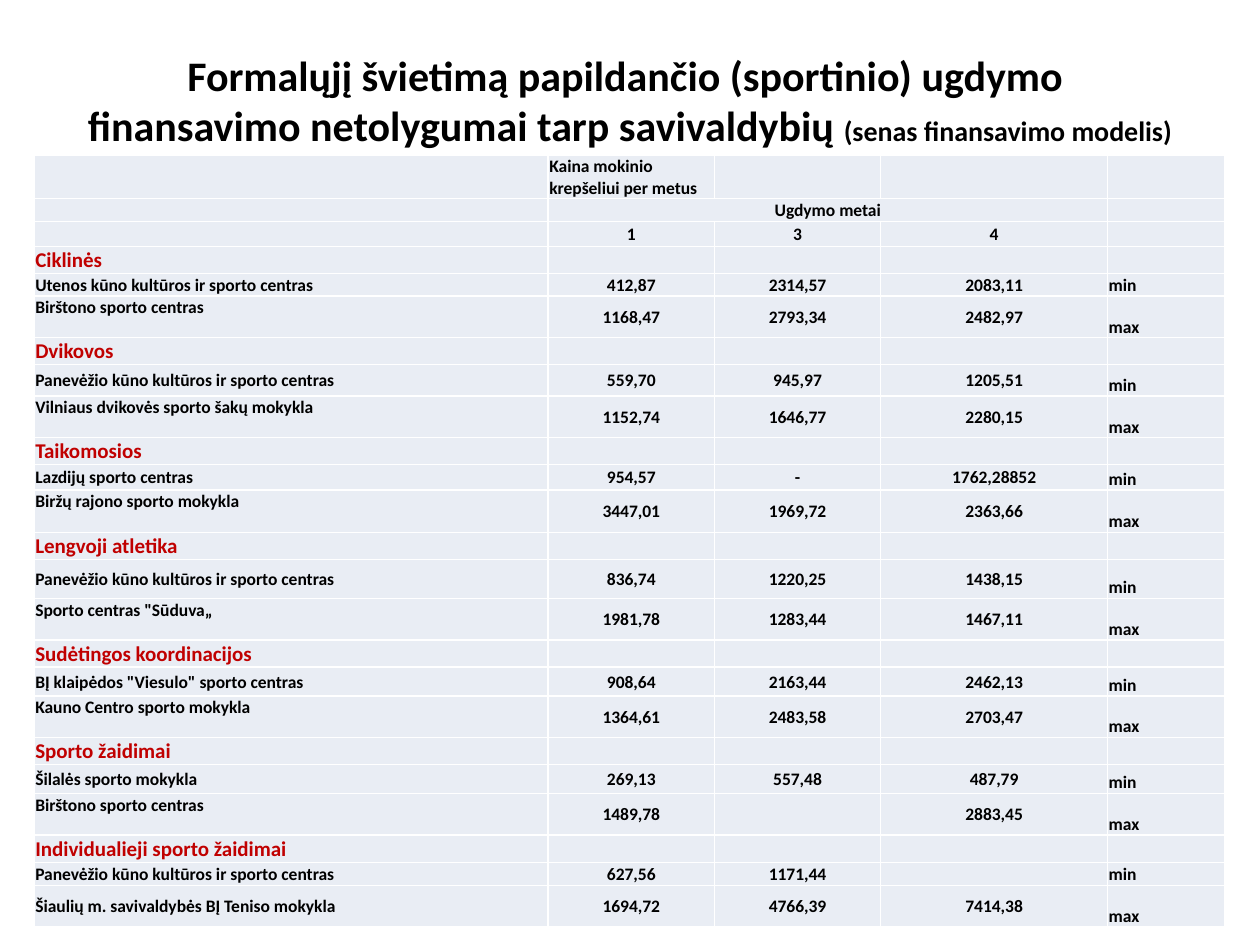
from lxml.etree import SubElement
from pptx import Presentation
from pptx.dml.color import RGBColor
from pptx.enum.text import MSO_ANCHOR, PP_ALIGN
from pptx.oxml.ns import qn
from pptx.util import Inches, Pt

BLACK, RED, WHITE, PALE = "000000", "C00000", "FFFFFF", "E9EDF4"
COLUMN_WIDTHS = [4.08, 1.32, 1.32, 1.8, 0.93]
ROW_HEIGHTS = [0.33, 0.18, 0.2, 0.21, 0.18, 0.33, 0.21, 0.25, 0.33, 0.21, 0.2, 0.34,
               0.21, 0.31, 0.33, 0.2, 0.23, 0.33, 0.21, 0.23, 0.33, 0.22, 0.18, 0.33]
HEADER = [
    ["", "Kaina mokinio krepšeliui per metus", "", "", ""],
    ["", "Ugdymo metai", "", "", ""],
    ["", "1", "3", "4", ""],
]
SPORTS = {
    "Ciklinės": [
        ["Utenos kūno kultūros ir sporto centras", "412,87", "2314,57", "2083,11"],
        ["Birštono sporto centras", "1168,47", "2793,34", "2482,97"],
    ],
    "Dvikovos": [
        ["Panevėžio kūno kultūros ir sporto centras", "559,70", "945,97", "1205,51"],
        ["Vilniaus dvikovės sporto šakų mokykla", "1152,74", "1646,77", "2280,15"],
    ],
    "Taikomosios": [
        ["Lazdijų sporto centras", "954,57", "-", "1762,28852"],
        ["Biržų rajono sporto mokykla", "3447,01", "1969,72", "2363,66"],
    ],
    "Lengvoji atletika": [
        ["Panevėžio kūno kultūros ir sporto centras", "836,74", "1220,25", "1438,15"],
        ['Sporto centras "Sūduva„', "1981,78", "1283,44", "1467,11"],
    ],
    "Sudėtingos koordinacijos": [
        ['BĮ klaipėdos "Viesulo" sporto centras', "908,64", "2163,44", "2462,13"],
        ["Kauno Centro sporto mokykla", "1364,61", "2483,58", "2703,47"],
    ],
    "Sporto žaidimai": [
        ["Šilalės sporto mokykla", "269,13", "557,48", "487,79"],
        ["Birštono sporto centras", "1489,78", "", "2883,45"],
    ],
    "Individualieji sporto žaidimai": [
        ["Panevėžio kūno kultūros ir sporto centras", "627,56", "1171,44", ""],
        ["Šiaulių m. savivaldybės BĮ Teniso mokykla", "1694,72", "4766,39", "7414,38"],
    ],
}


def color(value):
    return RGBColor.from_string(value)


def format_span(span, size, ink=BLACK):
    span.font.name = "Calibri"
    span.font.size = Pt(size)
    span.font.bold = True
    span.font.color.rgb = color(ink)


def set_end_size(para, size):
    SubElement(para._p, qn("a:endParaRPr"), sz=str(size * 100))


def add_title(page):
    box = page.shapes.title
    box.left, box.top, box.width, box.height = map(Inches, (0.5, 0.3, 9, 1.25))
    frame = box.text_frame
    frame.text = ("Formalųjį švietimą papildančio (sportinio) ugdymo \v"
                  "finansavimo netolygumai tarp savivaldybių ")
    frame.word_wrap = True
    frame.vertical_anchor = MSO_ANCHOR.MIDDLE
    para = frame.paragraphs[0]
    para.alignment = PP_ALIGN.CENTER
    for span in para.runs:
        format_span(span, 24)
    note = para.add_run()
    note.text = "(senas finansavimo modelis)"
    format_span(note, 16)
    para.add_line_break()
    for line_break, size in zip(para._p.findall(qn("a:br")), ("2400", "1600")):
        SubElement(line_break, qn("a:rPr"), sz=size)
    set_end_size(para, 16)


def add_borders(cell):
    properties = cell._tc.get_or_add_tcPr()
    for side in ("lnL", "lnR", "lnT", "lnB"):
        line = SubElement(properties, qn(f"a:{side}"), w=str(Pt(1)))
        fill = SubElement(line, qn("a:solidFill"))
        SubElement(fill, qn("a:srgbClr"), val=WHITE)


def format_cell(cell, text, size, ink, alignment, anchor):
    add_borders(cell)
    cell.fill.solid()
    cell.fill.fore_color.rgb = color(PALE)
    cell.margin_left = cell.margin_right = cell.margin_top = Inches(0.01)
    cell.margin_bottom = 0
    cell.vertical_anchor = anchor
    para = cell.text_frame.paragraphs[0]
    para.alignment = alignment
    if text:
        para.text = text
        format_span(para.runs[0], size, ink)
    else:
        set_end_size(para, size)


def table_rows():
    rows = list(HEADER)
    for sport, (cheapest, dearest) in SPORTS.items():
        rows += [[sport, "", "", "", ""], cheapest + ["min"], dearest + ["max"]]
    return rows


def cell_anchor(row, column, values, last_row):
    if row < 2 or column == 4:
        return MSO_ANCHOR.BOTTOM
    if column == 0 and values[4] == "max" and row != last_row:
        return MSO_ANCHOR.TOP
    return MSO_ANCHOR.MIDDLE


def add_funding_table(page):
    rows = table_rows()
    table = page.shapes.add_table(
        len(rows), len(COLUMN_WIDTHS), Inches(0.27), Inches(1.23),
        Inches(sum(COLUMN_WIDTHS)), Inches(sum(ROW_HEIGHTS))).table
    table.first_row = table.horz_banding = False
    for column, width in zip(table.columns, COLUMN_WIDTHS):
        column.width = Inches(width)
    for row, height in zip(table.rows, ROW_HEIGHTS):
        row.height = Inches(height)
    for row, values in enumerate(rows):
        for column, text in enumerate(values):
            is_sport = column == 0 and text in SPORTS
            centered = row > 0 and 1 <= column <= 3
            format_cell(table.cell(row, column), text,
                        12 if is_sport else 10, RED if is_sport else BLACK,
                        PP_ALIGN.CENTER if centered else PP_ALIGN.LEFT,
                        cell_anchor(row, column, values, len(rows) - 1))
    table.cell(1, 1).merge(table.cell(1, 3))


def main():
    deck = Presentation()
    deck.slide_width, deck.slide_height = Inches(10), Inches(7.5)
    page = deck.slides.add_slide(deck.slide_layouts[5])
    add_title(page)
    add_funding_table(page)
    deck.save("out.pptx")


if __name__ == "__main__":
    main()
